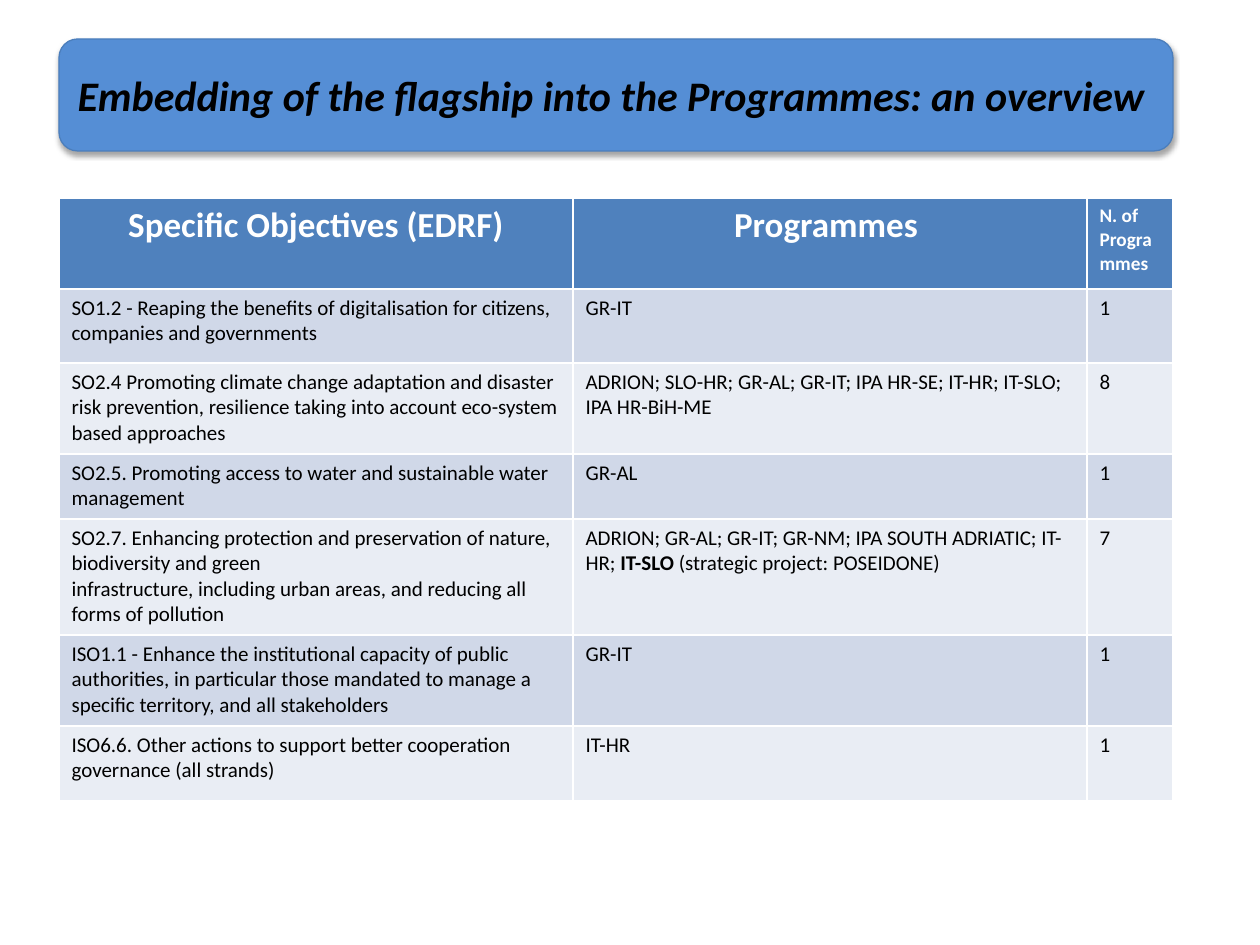
"""Build the slide that maps flagship objectives to programmes."""
from dataclasses import dataclass

from lxml import etree
from pptx import Presentation
from pptx.dml.color import RGBColor
from pptx.enum.shapes import MSO_SHAPE
from pptx.enum.text import MSO_ANCHOR, MSO_AUTO_SIZE, PP_ALIGN
from pptx.oxml.ns import qn
from pptx.util import Pt

ROUNDED = MSO_SHAPE.ROUNDED_RECTANGLE
MIDDLE = MSO_ANCHOR.MIDDLE
NO_AUTOFIT = MSO_AUTO_SIZE.NONE
LEFT, CENTER = PP_ALIGN.LEFT, PP_ALIGN.CENTER
PX = 914400 / 126


@dataclass(frozen=True)
class Theme:
    font: str = "Calibri"
    ink: str = "000000"
    white: str = "FFFFFF"
    panel: str = "558ED5"
    panel_line: str = "4B7EBC"
    header: str = "4F81BD"
    bands: tuple = ("D0D8E8", "E9EDF4")
    title_size: int = 24
    header_size: int = 20
    count_size: int = 11
    body_size: int = 12


THEME = Theme()


def px(*lengths):
    return [round(length * PX) for length in lengths]


def write(frame, text, *, size, color=THEME.ink, bold=False, italic=False, align=LEFT):
    for number, line in enumerate(text.split("\n")):
        para = frame.add_paragraph() if number else frame.paragraphs[0]
        para.alignment = align
        for position, part in enumerate(line.split("**")):
            span = para.add_run()
            span.text = part
            span.font.name = THEME.font
            span.font.size = Pt(size)
            span.font.bold = bold or position % 2 == 1
            span.font.italic = italic
            span.font.color.rgb = RGBColor.from_string(color)


deck = Presentation()
deck.slide_width, deck.slide_height = px(1260, 945)
page = deck.slides.add_slide(deck.slide_layouts[5])
title_area = px(59, 39, 1114, 112)

panel = page.shapes.add_shape(ROUNDED, *title_area)
panel.fill.solid()
panel.fill.fore_color.rgb = RGBColor.from_string(THEME.panel)
panel.line.color.rgb = RGBColor.from_string(THEME.panel_line)
panel.line.width = Pt(0.75)
panel.shadow.inherit = False
effects = panel._element.spPr.find(qn("a:effectLst"))
shadow = etree.SubElement(effects, qn("a:outerShdw"), blurRad=str(Pt(3.1)),
                          dist=str(Pt(1.8)), dir="5400000", rotWithShape="0")
shade = etree.SubElement(shadow, qn("a:srgbClr"), val=THEME.ink)
etree.SubElement(shade, qn("a:alpha"), val="35000")

title = page.shapes.title
title.left, title.top, title.width, title.height = title_area
panel._element.addnext(title._element)
title.text_frame.auto_size = NO_AUTOFIT
title.text_frame.word_wrap = True
title.text_frame.vertical_anchor = MIDDLE
write(title.text_frame, "Embedding of the flagship into the Programmes: an overview ",
      size=THEME.title_size, bold=True, italic=True, align=CENTER)

headings = [
    ("Specific Objectives (EDRF)", THEME.header_size, CENTER),
    ("Programmes ", THEME.header_size, CENTER),
    ("N. of Programmes", THEME.count_size, LEFT),
]
objectives = [
    ("SO1.2 - Reaping the benefits of digitalisation for citizens, companies and governments",
     "GR-IT", "1"),
    ("SO2.4 Promoting climate change adaptation and disaster risk prevention, "
     "resilience taking into account eco-system based approaches",
     "ADRION; SLO-HR; GR-AL; GR-IT; IPA HR-SE; IT-HR; IT-SLO; IPA HR-BiH-ME", "8"),
    ("SO2.5. Promoting access to water and sustainable water management", "GR-AL", "1"),
    ("SO2.7. Enhancing protection and preservation of nature, biodiversity and green\n"
     "infrastructure, including urban areas, and reducing all forms of pollution",
     "ADRION; GR-AL; GR-IT; GR-NM; IPA SOUTH ADRIATIC; IT-HR; "
     "**IT-SLO **(strategic project: POSEIDONE)", "7"),
    ("ISO1.1 - Enhance the institutional capacity of public authorities, in particular "
     "those mandated to manage a specific territory, and all stakeholders", "GR-IT", "1"),
    ("ISO6.6. Other actions to support better cooperation governance (all strands)",
     "IT-HR", "1"),
]
column_widths = px(514, 514, 86)
row_heights = px(91, 74, 91, 65, 116, 91, 75)

table = page.shapes.add_table(len(row_heights), len(column_widths), *px(59, 198),
                              sum(column_widths), sum(row_heights)).table
for column, width in zip(table.columns, column_widths):
    column.width = width
for row, height in zip(table.rows, row_heights):
    row.height = height

for cell, (text, size, align) in zip(table.rows[0].cells, headings):
    cell.fill.solid()
    cell.fill.fore_color.rgb = RGBColor.from_string(THEME.header)
    write(cell.text_frame, text, size=size, color=THEME.white, bold=True, align=align)

for number, texts in enumerate(objectives):
    for cell, text in zip(table.rows[number + 1].cells, texts):
        cell.fill.solid()
        cell.fill.fore_color.rgb = RGBColor.from_string(THEME.bands[number % 2])
        write(cell.text_frame, text, size=THEME.body_size)

deck.save("out.pptx")
